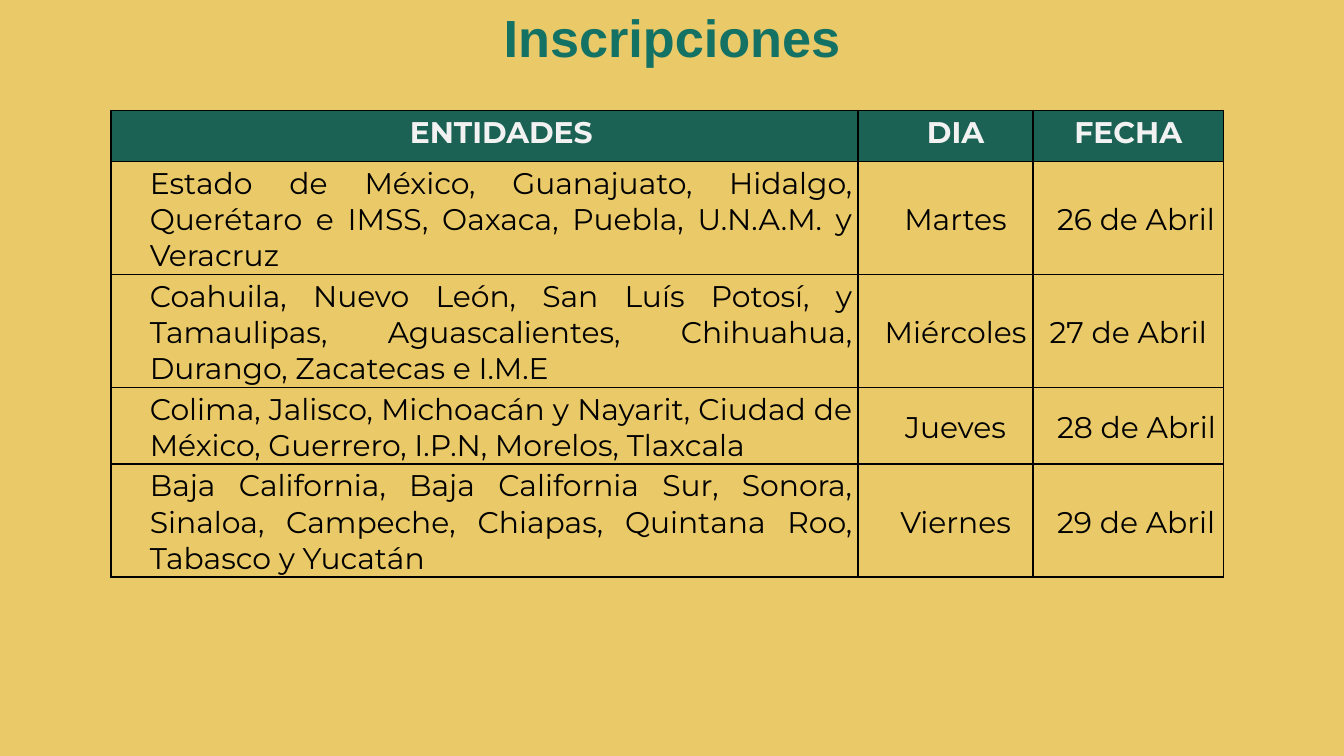
from dataclasses import dataclass

from lxml import etree
from pptx import Presentation
from pptx.dml.color import RGBColor
from pptx.enum import text
from pptx.oxml import ns
from pptx import util as u


@dataclass(frozen=True)
class Theme:
    background: str = "EAC968"
    title: str = "147265"
    header_fill: str = "1B6255"
    header_text: str = "F2F2F2"
    body_text: str = "000000"
    border: str = "000000"
    title_font: str = "Arial"
    table_font: str = "Montserrat"
    title_size: int = 28
    table_size: int = 16


THEME = Theme()
WIDTH = u.Inches(10)
HEIGHT = WIDTH * 9 // 16
ALIGN = text.PP_ALIGN

# Boxes are left, top, width and height as percentages of the slide
TITLE_BOX = (0, 1.8, 100, 6.2)
TABLE_BOX = (8.25, 14.6, 82.8, 60.3)
COLUMN_SHARES = (5.56, 1.3, 1.42)
HEADER_HEIGHT, LINE_HEIGHT = 0.38, 0.27
CELL_MARGINS = {"margin_left": 0.04, "margin_top": 0.03,
                "margin_right": 0.04, "margin_bottom": 0}

# Alignment, left indent and first-line indent, one per column
HEADER_FORMATS = ((ALIGN.CENTER, 0.25, 0), (ALIGN.CENTER, 0.25, -0.1),
                  (ALIGN.CENTER, 0.25, -0.3))
BODY_FORMATS = ((ALIGN.JUSTIFY, 0.25, 0), (ALIGN.CENTER, 0.25, -0.1),
                (ALIGN.LEFT, 0.25, -0.11))
CENTERED = (ALIGN.CENTER, 0, 0)

HEADERS = ("ENTIDADES", "DIA", "FECHA")
# Number of text lines, then the cells
ENROLMENTS = (
    (3, "Estado de México, Guanajuato, Hidalgo, Querétaro e IMSS, Oaxaca, "
        "Puebla, U.N.A.M. y Veracruz", "Martes", "26 de Abril"),
    (3, "Coahuila, Nuevo León, San Luís Potosí, y Tamaulipas, Aguascalientes, "
        "Chihuahua, Durango, Zacatecas e I.M.E", "Miércoles", "27 de Abril"),
    (2, "Colima, Jalisco, Michoacán y Nayarit, Ciudad de México, Guerrero, "
        "I.P.N, Morelos, Tlaxcala", "Jueves", "28 de Abril"),
    (3, "Baja California, Baja California Sur, Sonora, Sinaloa, Campeche, "
        "Chiapas, Quintana Roo, Tabasco y Yucatán", "Viernes", "29 de Abril"),
)


def place(box):
    return [round(share * side / 100)
            for share, side in zip(box, (WIDTH, HEIGHT, WIDTH, HEIGHT))]


def set_attributes(target, values):
    for name, value in values.items():
        setattr(target, name, value)


def style_font(font, name, size, color, bold):
    set_attributes(font, {"name": name, "size": u.Pt(size), "bold": bold})
    font.color.rgb = RGBColor.from_string(color)


def add_borders(cell):
    properties = cell._tc.get_or_add_tcPr()
    for position, side in enumerate(("lnL", "lnR", "lnT", "lnB")):
        line = etree.Element(ns.qn(f"a:{side}"), w=str(u.Pt(1)))
        fill = etree.SubElement(line, ns.qn("a:solidFill"))
        etree.SubElement(fill, ns.qn("a:srgbClr"), val=THEME.border)
        properties.insert(position, line)


def fill_cell(cell, words, layout, header):
    alignment, left, first_line = layout
    set_attributes(cell, {name: u.Inches(value)
                          for name, value in CELL_MARGINS.items()})
    cell.vertical_anchor = (text.MSO_ANCHOR.TOP if header
                            else text.MSO_ANCHOR.MIDDLE)
    if header:
        cell.fill.solid()
        cell.fill.fore_color.rgb = RGBColor.from_string(THEME.header_fill)
    else:
        cell.fill.background()
    add_borders(cell)

    paragraph = cell.text_frame.paragraphs[0]
    paragraph.alignment = alignment
    indents = paragraph._p.get_or_add_pPr()
    indents.set("marL", str(u.Inches(left)))
    indents.set("indent", str(u.Inches(first_line)))
    run = paragraph.add_run()
    run.text = words
    color = THEME.header_text if header else THEME.body_text
    style_font(run.font, THEME.table_font, THEME.table_size, color, header)


def add_title(slide, box, words):
    title = slide.shapes.title
    set_attributes(title, dict(zip(("left", "top", "width", "height"), place(box))))
    frame = title.text_frame
    set_attributes(frame, {
        "margin_left": u.Inches(0.07), "margin_right": u.Inches(0.07),
        "margin_top": u.Inches(0.04), "margin_bottom": u.Inches(0.04),
        "vertical_anchor": text.MSO_ANCHOR.MIDDLE, "word_wrap": True,
        "auto_size": text.MSO_AUTO_SIZE.NONE})
    paragraph = frame.paragraphs[0]
    paragraph.alignment = ALIGN.CENTER
    run = paragraph.add_run()
    run.text = words
    style_font(run.font, THEME.title_font, THEME.title_size, THEME.title, True)


def add_enrolment_table(slide, box):
    left, top, width, height = place(box)
    table = slide.shapes.add_table(len(ENROLMENTS) + 1, len(HEADERS),
                                   left, top, width, height).table
    table.horz_banding = False
    for column, share in zip(table.columns, COLUMN_SHARES):
        column.width = round(width * share / sum(COLUMN_SHARES))

    heights = [HEADER_HEIGHT] + [lines * LINE_HEIGHT + 0.01
                                 for lines, *_ in ENROLMENTS]
    for row, share in zip(table.rows, heights):
        row.height = round(height * share / sum(heights))

    for index, (words, layout) in enumerate(zip(HEADERS, HEADER_FORMATS)):
        fill_cell(table.cell(0, index), words, layout, header=True)
    for row_index, (_, *entries) in enumerate(ENROLMENTS, start=1):
        for index, (words, layout) in enumerate(zip(entries, BODY_FORMATS)):
            if words == "27 de Abril":
                layout = CENTERED
            fill_cell(table.cell(row_index, index), words, layout, header=False)


def main():
    presentation = Presentation()
    set_attributes(presentation, {"slide_width": WIDTH, "slide_height": HEIGHT})
    slide = presentation.slides.add_slide(presentation.slide_layouts[5])
    slide.background.fill.solid()
    slide.background.fill.fore_color.rgb = RGBColor.from_string(THEME.background)
    add_title(slide, TITLE_BOX, "Inscripciones")
    add_enrolment_table(slide, TABLE_BOX)
    presentation.save("out.pptx")


if __name__ == "__main__":
    main()
